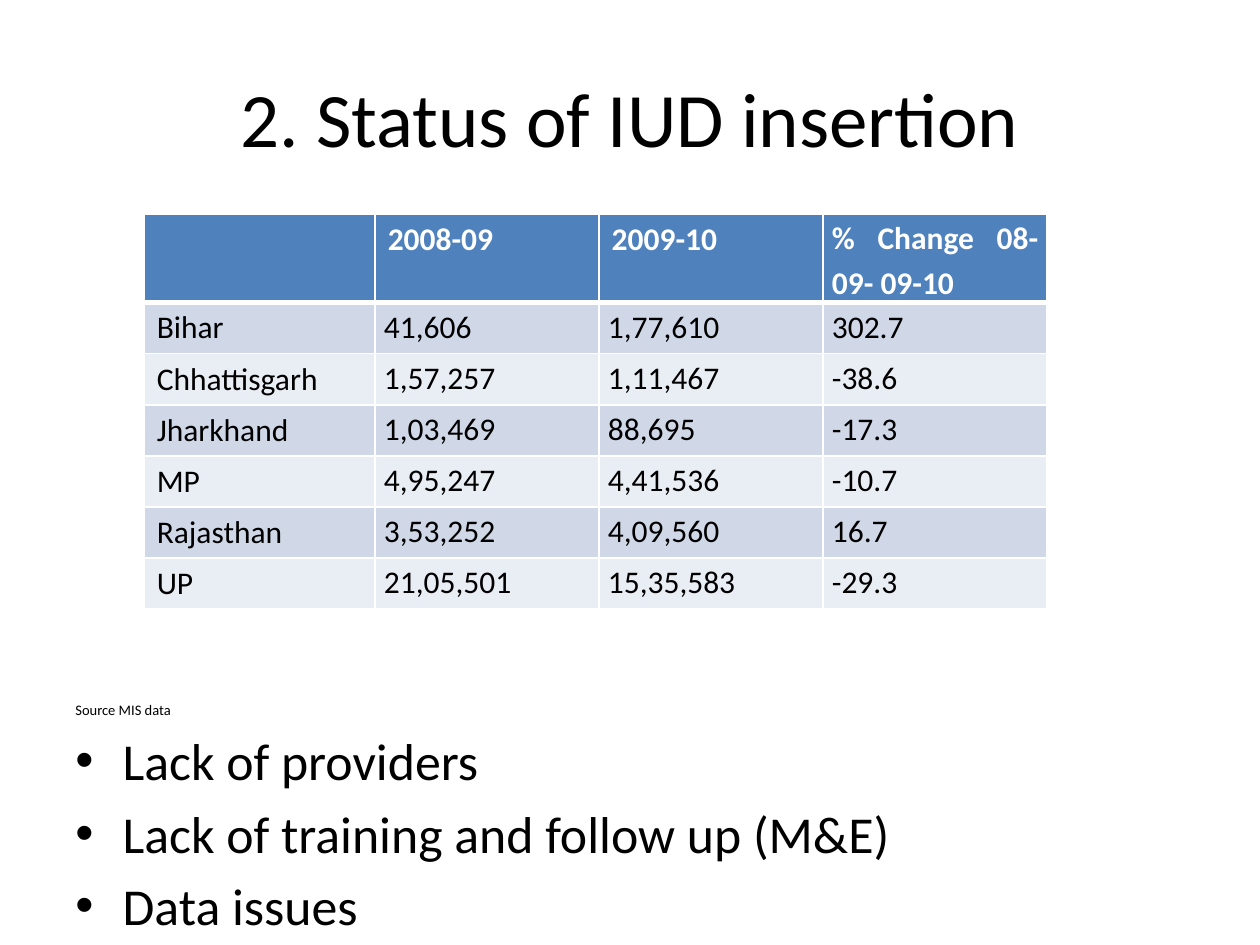
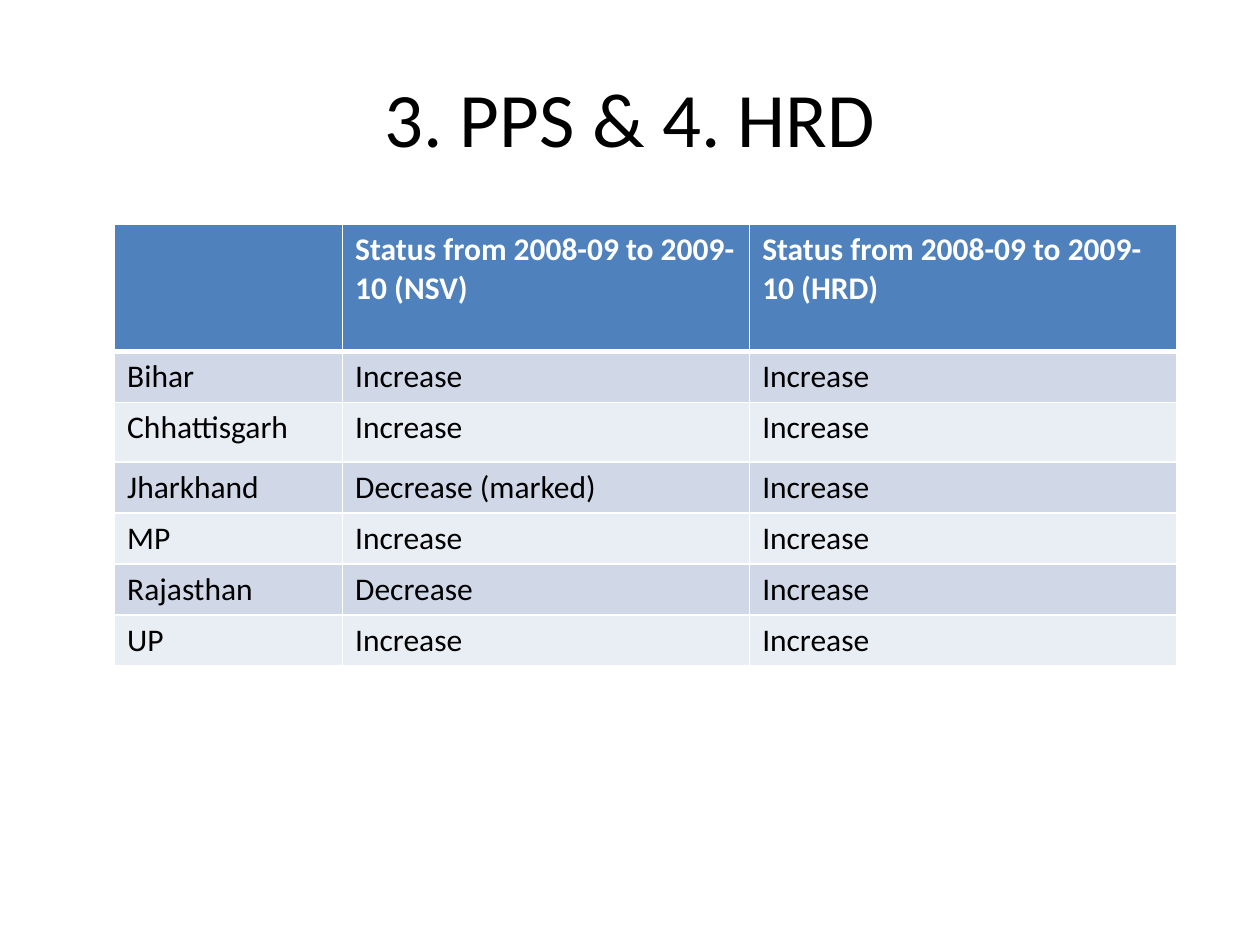
from lxml import etree
from pptx import Presentation
from pptx.dml.color import RGBColor
from pptx.enum.text import MSO_ANCHOR, PP_ALIGN
from pptx.oxml.ns import qn
from pptx.util import Pt

CENTER = PP_ALIGN.CENTER
JUSTIFY = PP_ALIGN.JUSTIFY
MIDDLE = MSO_ANCHOR.MIDDLE
TOP = MSO_ANCHOR.TOP
FONT = "Calibri"
TITLE_ONLY = 5
COLORS = {
    "text": "000000",
    "white": "FFFFFF",
    "header": "4F81BD",
    "odd_row": "D0D8E8",
    "even_row": "E9EDF4",
}


def add_run(paragraph, text, size, color="text", bold=False):
    run = paragraph.add_run()
    run.text = text
    run.font.name = FONT
    run.font.size = Pt(size)
    run.font.bold = bold
    run.font.color.rgb = RGBColor.from_string(COLORS[color])


def add_borders(cell, widths):
    properties = cell._tc.get_or_add_tcPr()
    for side, width in widths.items():
        line = etree.SubElement(properties, qn(f"a:ln{side}"), w=str(Pt(width)))
        fill = etree.SubElement(line, qn("a:solidFill"))
        etree.SubElement(fill, qn("a:srgbClr"), val=COLORS["white"])


STATES = ["Bihar", "Chhattisgarh", "Jharkhand", "MP", "Rajasthan", "UP"]
IUD_FIGURES = [
    ["41,606", "1,77,610", "302.7"],
    ["1,57,257", "1,11,467", "-38.6"],
    ["1,03,469", "88,695", "-17.3"],
    ["4,95,247", "4,41,536", "-10.7"],
    ["3,53,252", "4,09,560", "16.7"],
    ["21,05,501", "15,35,583", "-29.3"],
]
NSV_STATUS = ["Increase", "Increase", "Decrease (marked)", "Increase", "Decrease", "Increase"]
ROW_HEIGHT = 29.2

SLIDES = [
    {
        "title": "2. Status of IUD insertion",
        "position": (82.4, 122.4),
        "columns": [132, 128, 128, 128],
        "rows": [50.5] + [ROW_HEIGHT] * 6,
        "header": ["", "2008-09", "2009-10", "% Change 08-09- 09-10"],
        "body": [[state, *figures] for state, figures in zip(STATES, IUD_FIGURES)],
        "justified": [(0, 3)] + [(row, column) for row in range(1, 7) for column in range(1, 4)],
    },
    {
        "title": "3. PPS & 4. HRD",
        "position": (65.5, 128.2),
        "columns": [130.3, 232.6, 244.1],
        "rows": [72.5, ROW_HEIGHT, 34] + [ROW_HEIGHT] * 4,
        "header": ["", "Status from 2008-09 to 2009-10 (NSV)", "Status from 2008-09 to 2009-10 (HRD)"],
        "body": [[state, status, "Increase"] for state, status in zip(STATES, NSV_STATUS)],
        "justified": [],
    },
]

presentation = Presentation()
presentation.slide_width = Pt(720)
presentation.slide_height = Pt(540)

for content in SLIDES:
    slide = presentation.slides.add_slide(presentation.slide_layouts[TITLE_ONLY])
    title = slide.shapes.title
    title.left, title.top, title.width, title.height = Pt(36), Pt(21.6), Pt(648), Pt(90)
    title.text_frame.vertical_anchor = MIDDLE
    paragraph = title.text_frame.paragraphs[0]
    paragraph.alignment = CENTER
    add_run(paragraph, content["title"], 44)

    columns, rows = content["columns"], content["rows"]
    left, top = content["position"]
    table = slide.shapes.add_table(
        len(rows), len(columns), Pt(left), Pt(top), Pt(sum(columns)), Pt(sum(rows))
    ).table
    table.first_row = True
    table.horz_banding = False
    for column, width in zip(table.columns, columns):
        column.width = Pt(width)
    for row, height in zip(table.rows, rows):
        row.height = Pt(height)

    for row_index, texts in enumerate([content["header"], *content["body"]]):
        is_header = row_index == 0
        fill_color = "header" if is_header else "odd_row" if row_index % 2 else "even_row"
        for column_index, text in enumerate(texts):
            cell = table.cell(row_index, column_index)
            add_borders(cell, {"L": 1, "R": 1, "T": 3 if row_index == 1 else 1, "B": 3 if is_header else 1})
            cell.fill.solid()
            cell.fill.fore_color.rgb = RGBColor.from_string(COLORS[fill_color])
            paragraph = cell.text_frame.paragraphs[0]
            if (row_index, column_index) in content["justified"]:
                cell.margin_left = cell.margin_right = Pt(5.04)
                cell.margin_top = cell.margin_bottom = Pt(0)
                paragraph.alignment = JUSTIFY
                paragraph.line_spacing = 1.15
            if text:
                add_run(paragraph, text, 18, "white" if is_header else "text", is_header)

notes_box = presentation.slides[0].shapes.add_textbox(Pt(36), Pt(126), Pt(648), Pt(356.4))
frame = notes_box.text_frame
frame.word_wrap = True
frame.vertical_anchor = TOP
frame.margin_top = Pt(274.6)
add_run(frame.paragraphs[0], "Source MIS data", 8.3)
for text in ["Lack of providers", "Lack of training and follow up (M&E)", "Data issues"]:
    paragraph = frame.add_paragraph()
    paragraph.space_before = Pt(5.9)
    properties = paragraph._p.get_or_add_pPr()
    properties.set("marL", str(Pt(27)))
    properties.set("indent", str(Pt(-27)))
    etree.SubElement(properties, qn("a:buFont"), typeface="Arial")
    etree.SubElement(properties, qn("a:buChar"), char="•")
    add_run(paragraph, text, 29.6)

presentation.save("out.pptx")
